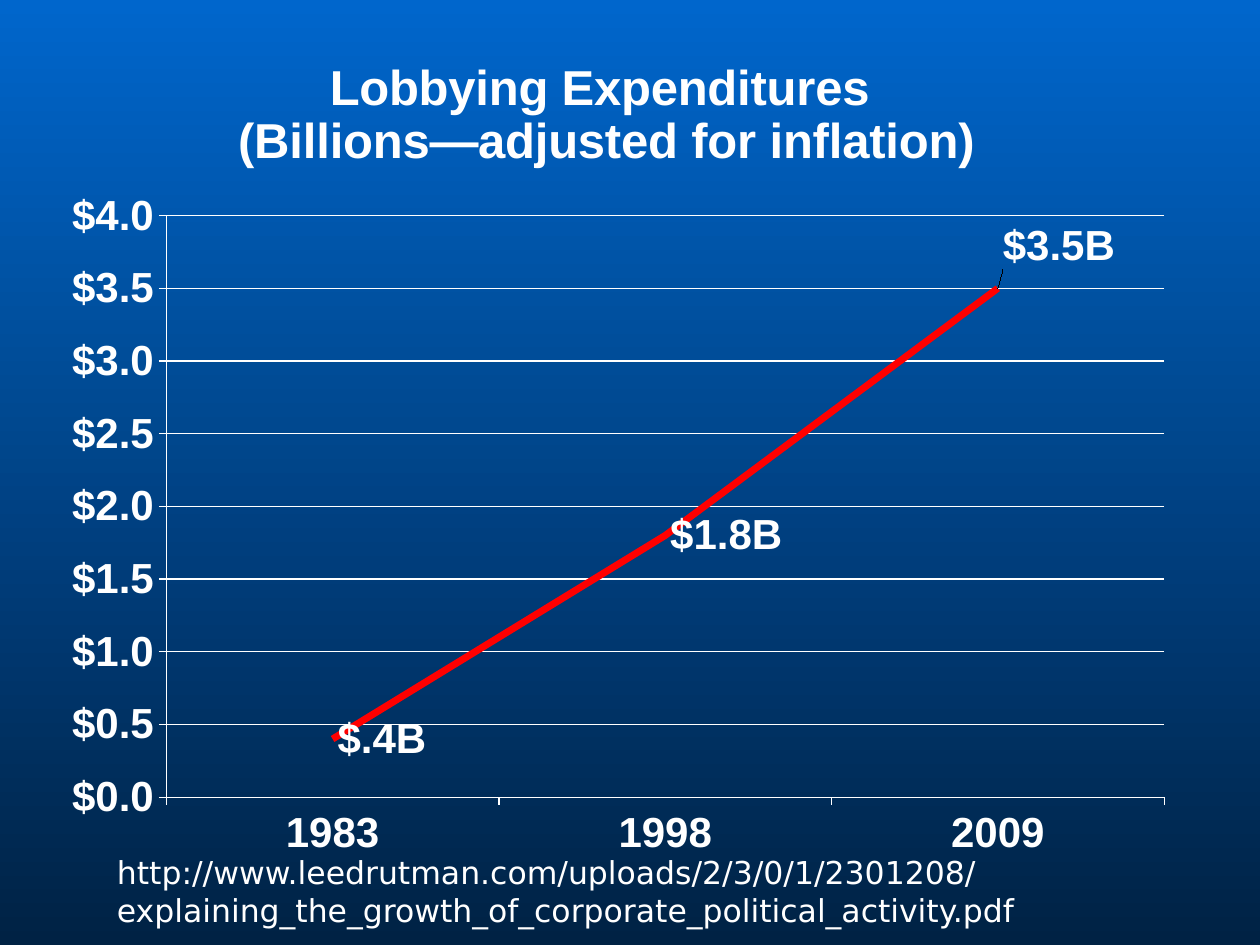
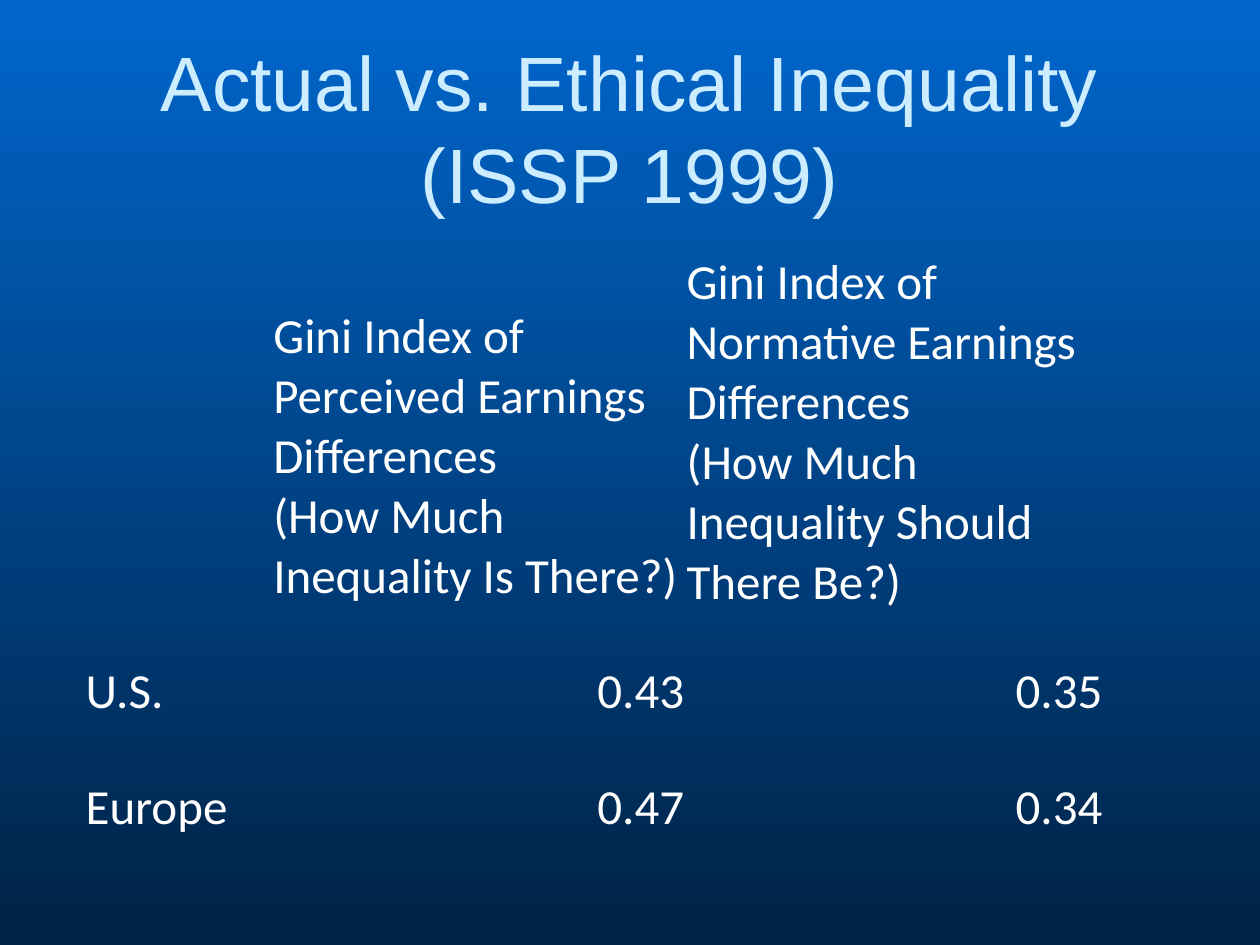
from dataclasses import dataclass

from lxml import etree
from pptx import Presentation
from pptx.chart.data import CategoryChartData
from pptx.dml.color import RGBColor as RGB
from pptx.enum.chart import XL_CHART_TYPE as CT, XL_LABEL_POSITION as LP, XL_TICK_MARK as TM
from pptx.enum.text import MSO_ANCHOR as ANCHOR, PP_ALIGN as ALIGN
from pptx.oxml import parse_xml
from pptx.oxml.ns import nsdecls, qn
from pptx.util import Inches, Pt


@dataclass(frozen=True)
class Theme:
    """Colours, fonts and type sizes shared by the slides."""
    top: RGB = RGB(0x00, 0x66, 0xCC)
    bottom: RGB = RGB(0x00, 0x22, 0x44)
    text: RGB = RGB(0xFF, 0xFF, 0xFF)
    title: RGB = RGB(0xCC, 0xEC, 0xFF)
    line: RGB = RGB(0xFF, 0x00, 0x00)
    heading: str = "Arial"
    body: str = "Calibri"
    source: str = "DejaVu Sans"
    title_size: int = 44
    chart_title_size: int = 28
    chart_size: int = 24
    table_size: int = 28
    source_size: int = 18


T = Theme()
NO_STYLE = "{2D5ABB26-0587-4C30-8999-92F81FD0307C}"


def set_attrs(obj, formats):
    """Set each attribute of an object from a dict of values."""
    for name, value in formats.items():
        setattr(obj, name, value)


def set_font(font, name, size, color=T.text, bold=False):
    """Give a font its face, size, colour and weight."""
    set_attrs(font, {"name": name, "size": Pt(size), "bold": bold})
    font.color.rgb = color


def write(tf, lines, name, size, color=T.text, align=ALIGN.LEFT):
    """Write one paragraph for each line."""
    for i, line in enumerate(lines):
        p = tf.add_paragraph() if i else tf.paragraphs[0]
        p.alignment = align
        r = p.add_run()
        r.text = line
        set_font(r.font, name, size, color)


def add_slide(prs):
    """Add a blank slide with the shared gradient background."""
    s = prs.slides.add_slide(prs.slide_layouts[6])
    fill = s.background.fill
    fill.gradient()
    fill.gradient_angle = 270
    for stop, position, color in zip(fill.gradient_stops, (0, 1), (T.top, T.bottom)):
        stop.position = position
        stop.color.rgb = color
    return s


def add_text(s, box, text, name, size, color=T.text, align=ALIGN.LEFT, anchor=ANCHOR.TOP):
    """Add a wrapping text box."""
    sp = s.shapes.add_textbox(*map(Inches, box))
    set_attrs(sp.text_frame, {"word_wrap": True, "vertical_anchor": anchor})
    write(sp.text_frame, [text], name, size, color, align)


def manual_layout(**values):
    """Make a chart layout element from fractions of the chart."""
    layout = parse_xml(f"<c:layout {nsdecls('c')}><c:manualLayout/></c:layout>")
    for tag, value in values.items():
        etree.SubElement(layout[0], qn(f"c:{tag}")).set("val", str(value))
    return layout


def place(element, after, layout):
    """Put a layout after the given child, replacing any existing one."""
    for old in element.findall(qn("c:layout")):
        element.remove(old)
    if after is None:
        element.insert(0, layout)
    else:
        element.find(qn(after)).addnext(layout)


def style_line(fmt, color, width):
    """Colour a line and set its width in points."""
    fmt.line.color.rgb = color
    fmt.line.width = Pt(width)


def style_axes(chart):
    """Set the scale, ticks and gridlines."""
    value_axis = chart.value_axis
    set_attrs(value_axis, {"minimum_scale": 0, "maximum_scale": 4, "major_unit": 0.5,
                           "has_major_gridlines": True})
    set_attrs(value_axis.tick_labels, {"number_format": r"\$#,##0.0",
                                       "number_format_is_linked": False})
    style_line(value_axis.major_gridlines.format, T.text, 0.75)
    for axis in (value_axis, chart.category_axis):
        axis.major_tick_mark = TM.OUTSIDE
        style_line(axis.format, T.text, 0.75)


def style_title(chart, lines):
    """Write and place the chart title."""
    title = chart.chart_title
    write(title.text_frame, lines, T.heading, T.chart_title_size, align=ALIGN.CENTER)
    for p in title.text_frame.paragraphs:
        p.runs[0].font.bold = True
    title.include_in_layout = False
    place(title._element, "c:tx",
          manual_layout(xMode="edge", yMode="edge", x=0.16, y=0.03))


def style_labels(series):
    """Show values beside the points and lift the last one."""
    number_format = r'\$##.#"B"'
    labels = series.data_labels
    set_attrs(labels, {"show_value": True, "position": LP.RIGHT,
                       "number_format": number_format, "number_format_is_linked": False})
    set_font(labels.font, T.heading, T.chart_size, bold=True)
    last = series.points[2].data_label
    last.position = LP.RIGHT
    set_font(last.font, T.heading, T.chart_size, bold=True)
    label = labels._element.find(qn("c:dLbl"))
    place(label, "c:idx", manual_layout(x=0, y=-0.05))
    fmt = parse_xml(f'<c:numFmt {nsdecls("c")} sourceLinked="0"/>')
    fmt.set("formatCode", number_format)
    label.find(qn("c:layout")).addnext(fmt)


def add_line_chart(s, box, title, categories, values):
    """Add the line chart of spending."""
    data = CategoryChartData()
    data.categories = categories
    data.add_series("Series 1", values)
    chart = s.shapes.add_chart(CT.LINE, *map(Inches, box), data).chart
    set_attrs(chart, {"has_legend": False, "has_title": True})
    set_font(chart.font, T.heading, T.chart_size, bold=True)
    style_title(chart, title)
    style_axes(chart)
    plot = chart.plots[0]
    plot.vary_by_categories = False
    series = plot.series[0]
    series.smooth = False
    style_line(series.format, T.line, 4)
    style_labels(series)
    place(chart._chartSpace.chart.plotArea, None,
          manual_layout(layoutTarget="inner", xMode="edge", yMode="edge",
                        x=0.1, y=0.22, w=0.88, h=0.69))


def add_table(s, box, widths, heights, rows):
    """Add a plain table with figures on the right."""
    table = s.shapes.add_table(len(rows), len(widths), *map(Inches, box)).table
    set_attrs(table, {"first_row": False, "horz_banding": False})
    table._tbl.tblPr.find(qn("a:tableStyleId")).text = NO_STYLE
    for column, width in zip(table.columns, widths):
        column.width = Inches(width)
    for row, height, texts in zip(table.rows, heights, rows):
        row.height = Inches(height)
        for cell, lines in zip(row.cells, texts):
            cell.fill.background()
            set_attrs(cell, {"vertical_anchor": ANCHOR.BOTTOM, "margin_bottom": 0,
                             **{f"margin_{side}": Inches(0.01)
                                for side in ("left", "right", "top")}})
            is_figure = bool(lines) and lines[0][0].isdigit()
            write(cell.text_frame, lines, T.body, T.table_size,
                  align=ALIGN.RIGHT if is_figure else ALIGN.LEFT)


def lobbying_slide(prs):
    """Build the slide on lobbying expenditures."""
    s = add_slide(prs)
    add_line_chart(s, (0.42, 0.24, 9, 6.69),
                   ["Lobbying Expenditures ", "(Billions—adjusted for inflation)"],
                   ["1983", "1998", "2009"], [0.4, 1.8, 3.5])
    add_text(s, (0.83, 6.72, 8.67, 0.71),
             "http://www.leedrutman.com/uploads/2/3/0/1/2301208/"
             "explaining_the_growth_of_corporate_political_activity.pdf",
             T.source, T.source_size)


def inequality_slide(prs):
    """Build the slide on actual and ethical inequality."""
    s = add_slide(prs)
    add_text(s, (0.5, 0.38, 9, 1.25), "Actual vs. Ethical Inequality (ISSP 1999)",
             T.heading, T.title_size, T.title, ALIGN.CENTER, ANCHOR.MIDDLE)
    rows = [
        [[],
         ["Gini Index of Perceived Earnings Differences", "(How Much Inequality Is There?)"],
         ["Gini Index of Normative Earnings Differences",
          "(How Much Inequality Should There Be?)"]],
        [["U.S."], ["0.43"], ["0.35"]],
        [["Europe"], ["0.47"], ["0.34"]],
    ]
    add_table(s, (0.67, 2, 8.09, 4.64), (1.49, 3.28, 3.32), (2.8, 0.92, 0.92), rows)


def main():
    """Build and save the presentation."""
    prs = Presentation()
    set_attrs(prs, {"slide_width": Inches(10), "slide_height": Inches(7.5)})
    lobbying_slide(prs)
    inequality_slide(prs)
    prs.save("out.pptx")


if __name__ == "__main__":
    main()
